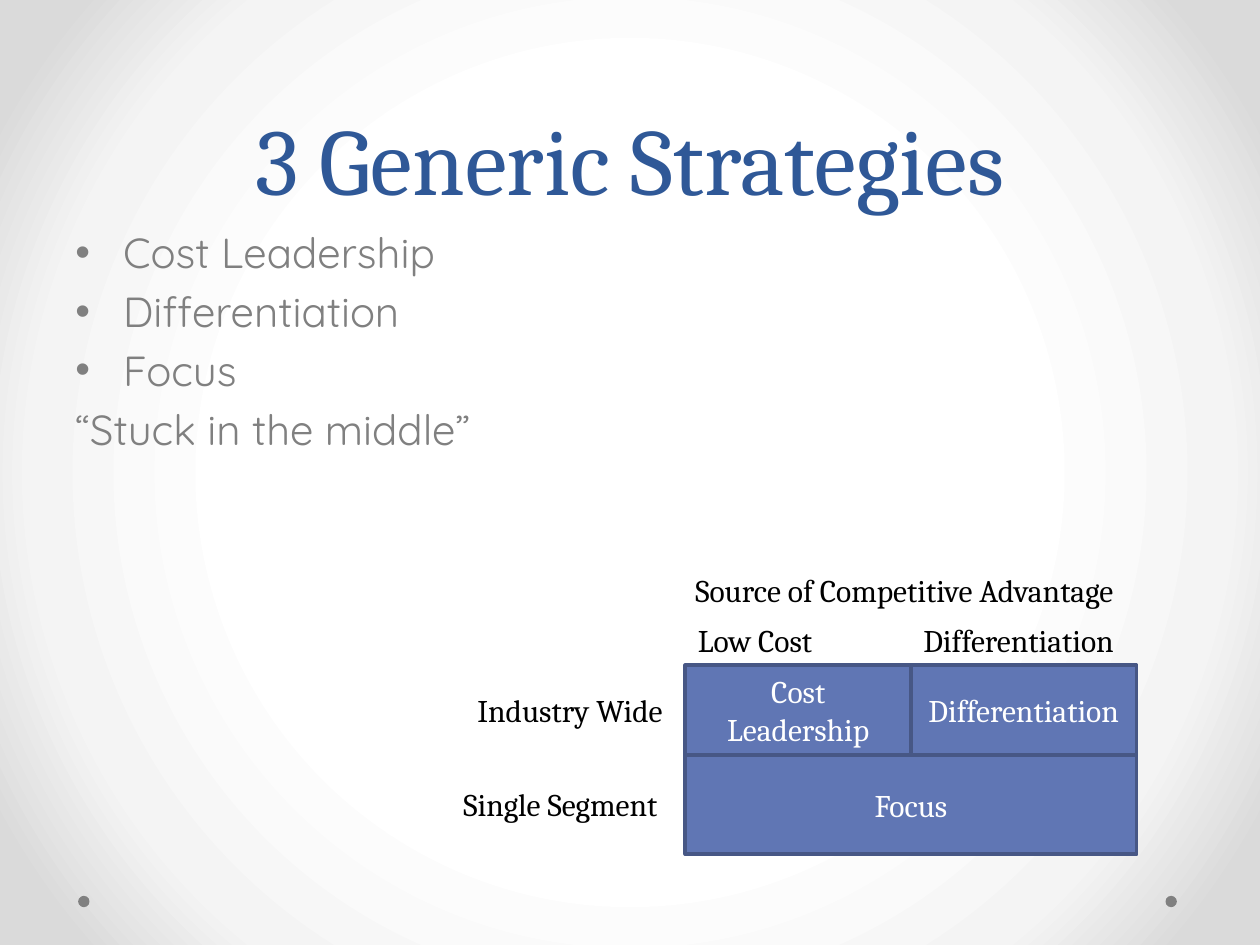
from lxml import etree
from pptx import Presentation, util as u
from pptx.dml.color import RGBColor
from pptx.enum import shapes, text
from pptx.oxml import ns

SERIF, SANS = "Cambria", "Quicksand"
BLUE, EDGE, GREY = "6076B4", "475785", "808080"


def tint(code):
    """Turn a hex string into a colour."""
    return RGBColor.from_string(code)


def node(parent, tag, **attrs):
    """Append a drawing element with its attributes."""
    return etree.SubElement(parent, ns.qn(tag), attrs)


def style(para, size, color, font=SERIF, align=text.PP_ALIGN.LEFT):
    """Set the font and alignment of a paragraph."""
    para.font.size, para.font.name = u.Pt(size), font
    para.font.color.rgb = tint(color)
    para.alignment = align


def label(slide, box, words, size=18, color="000000", **look):
    """Add a wrapped text box with one paragraph per line and return its frame."""
    frame = slide.shapes.add_textbox(*map(u.Inches, box)).text_frame
    frame.word_wrap = True
    frame.text = words
    for para in frame.paragraphs:
        style(para, size, color, **look)
    return frame


def shape(slide, kind, box, fill, edge=None):
    """Add a flat preset shape, with an outline if an edge colour is given."""
    item = slide.shapes.add_shape(kind, *map(u.Inches, box))
    item.shadow.inherit = False
    item.fill.solid()
    item.fill.fore_color.rgb = tint(fill)
    if edge:
        item.line.color.rgb = tint(edge)
        item.line.width = u.Pt(2.25)
    else:
        item.line.fill.background()
    return item


def backdrop(slide):
    """Paint the round gradient and the two footer dots."""
    slide.background.fill.gradient()
    grad = slide.element.find(".//" + ns.qn("a:gradFill"))
    for child in list(grad):
        grad.remove(child)
    stops = node(grad, "a:gsLst")
    for share, code in ((50, "FFFFFF"), (76, "F4F4F4"), (92, "DADADA")):
        stop = node(stops, "a:gs", pos=str(share * 1000))
        node(stop, "a:srgbClr", val=code)
    ring = node(grad, "a:path", path="circle")
    node(ring, "a:fillToRect", **dict.fromkeys("ltrb", "50000"))
    for left in (0.62, 9.25):
        shape(slide, shapes.MSO_SHAPE.OVAL, (left, 7.11, 0.09, 0.09), GREY)


def title(slide, box, words):
    """Place the heading at the foot of its box."""
    frame = label(slide, box, words, 54, "2F5897", align=text.PP_ALIGN.CENTER)
    frame.vertical_anchor = text.MSO_ANCHOR.BOTTOM
    frame.paragraphs[0].line_spacing = u.Pt(58)


def points(slide, box, items, close):
    """Place a bulleted list that ends with a plain line."""
    frame = label(slide, box, "\n".join([*items, close]), 24, GREY, font=SANS)
    for para in frame.paragraphs:
        para.space_before = u.Pt(4.8)
    for para in frame.paragraphs[:-1]:
        props = para._p.get_or_add_pPr()
        props.set("marL", str(u.Inches(0.38)))
        props.set("indent", str(u.Inches(-0.38)))
        node(props, "a:buFont", typeface="Arial")
        node(props, "a:buChar", char="•")


def cell(slide, box, words):
    """Add one outlined field of the matrix."""
    item = shape(slide, shapes.MSO_SHAPE.RECTANGLE, box, BLUE, EDGE)
    frame = item.text_frame
    frame.word_wrap = True
    frame.text = words
    frame.vertical_anchor = text.MSO_ANCHOR.MIDDLE
    style(frame.paragraphs[0], 18, "FFFFFF", align=text.PP_ALIGN.CENTER)


def matrix(slide, box):
    """Draw the strategy matrix with its column and row labels."""
    left, top, wide, high = box
    half, upper, line = wide / 2, 0.71, 0.4
    lower = high - upper
    cell(slide, (left, top + upper, wide, lower), "Focus")
    for col, words in enumerate(("Cost Leadership", "Differentiation")):
        cell(slide, (left + col * half, top, half, upper), words)
    label(slide, (left - 0.02, top - 2 * line, 3.75, line),
          "Source of Competitive Advantage")
    for col, words in enumerate(("Low Cost", "Differentiation")):
        label(slide, (left + col * half, top - line, 1.87, line), words)
    rows = (("Industry Wide", 3.69, top + upper / 2),
            ("Single Segment", 3.58, top + upper + lower / 2))
    for words, start, mid in rows:
        label(slide, (start, mid - line / 2, 1.83, line), words)


def main():
    """Build and save the slide."""
    deck = Presentation()
    deck.slide_width, deck.slide_height = u.Inches(10), u.Inches(7.5)
    slide = deck.slides.add_slide(deck.slide_layouts[6])
    backdrop(slide)
    title(slide, (0.5, 0, 9, 1.75), "3 Generic Strategies")
    points(slide, (0.5, 1.75, 9, 4.95),
           ("Cost Leadership", "Differentiation", "Focus"),
           "“Stuck in the middle”")
    matrix(slide, (5.44, 5.28, 3.58, 1.5))
    deck.save("out.pptx")


if __name__ == "__main__":
    main()
